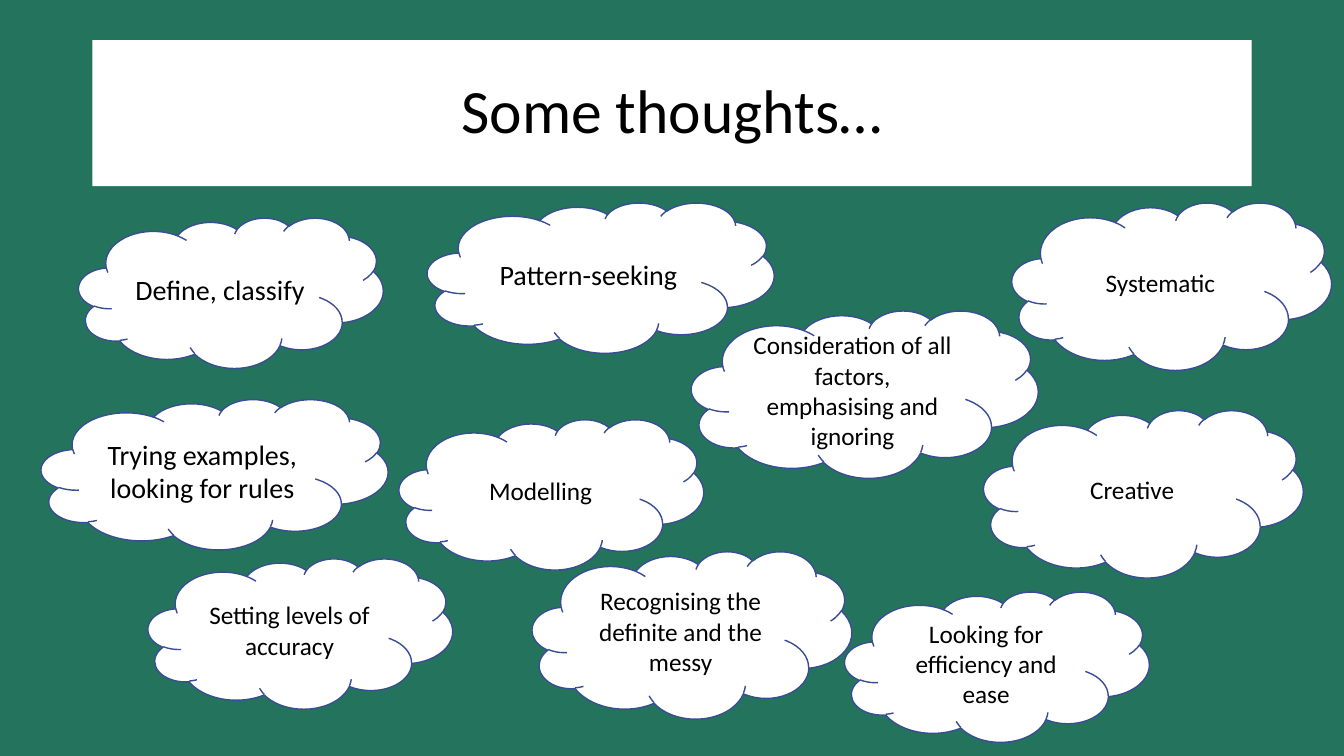
from dataclasses import dataclass

from pptx import Presentation
from pptx.dml.color import RGBColor
from pptx.enum.shapes import MSO_SHAPE
from pptx.enum.text import MSO_ANCHOR, MSO_AUTO_SIZE, PP_ALIGN
from pptx.util import Pt

CLOUD = MSO_SHAPE.CLOUD
MIDDLE = MSO_ANCHOR.MIDDLE
CENTER = PP_ALIGN.CENTER
NO_FIT = MSO_AUTO_SIZE.NONE


@dataclass(frozen=True)
class Theme:
    """Colours, font and type sizes of the slide."""
    background: RGBColor = RGBColor(0x23, 0x73, 0x5D)
    panel: RGBColor = RGBColor(0xFF, 0xFF, 0xFF)
    outline: RGBColor = RGBColor(0x3A, 0x4C, 0x94)
    ink: RGBColor = RGBColor(0, 0, 0)
    font: str = "Calibri"
    title: int = 44
    large: int = 20
    small: int = 18


THEME = Theme()
NARROW, MEDIUM, WIDE = 217.5, 228.2, 247.7
LOW, TALL = 107.3, 119.5

THOUGHTS = [
    ("Looking for efficiency and ease", THEME.small, (603.4, 422.6, NARROW, LOW)),
    ("Recognising the definite and the messy", THEME.small, (380.2, 393.8, MEDIUM, TALL)),
    ("Setting levels of accuracy", THEME.small, (105.8, 398.9, NARROW, LOW)),
    ("Creative", THEME.small, (702.7, 293, MEDIUM, TALL)),
    ("Consideration of all factors, emphasising and ignoring", THEME.small,
     (493.9, 221.8, WIDE, TALL)),
    ("Modelling", THEME.small, (285.1, 299.5, NARROW, LOW)),
    ("Trying examples, looking for rules", THEME.large, (29.5, 285.1, WIDE, LOW)),
    ("Systematic", THEME.small, (722.9, 144.7, MEDIUM, TALL)),
    ("Pattern-seeking", THEME.large, (305.3, 144.7, WIDE, LOW)),
    ("Define, classify", THEME.large, (56.2, 155.5, NARROW, LOW)),
]


def apply_format(target, values):
    """Set each attribute in values on target."""
    for attribute, value in values.items():
        setattr(target, attribute, value)


def fill_panel(panel, wording, size):
    """Give a shape the panel fill and centred wording."""
    panel.fill.solid()
    panel.fill.fore_color.rgb = THEME.panel
    frame = panel.text_frame
    frame.text = wording
    apply_format(frame, {"word_wrap": True, "auto_size": NO_FIT, "vertical_anchor": MIDDLE})
    paragraph = frame.paragraphs[0]
    paragraph.alignment = CENTER
    apply_format(paragraph.font, {"name": THEME.font, "size": Pt(size)})
    paragraph.font.color.rgb = THEME.ink
    return paragraph


def place_heading(slide, wording, box):
    """Place the title placeholder in box as a white banner."""
    heading = slide.shapes.title
    apply_format(heading, dict(zip(("left", "top", "width", "height"), map(Pt, box))))
    fill_panel(heading, wording, THEME.title).line_spacing = 0.9


def add_thought(slide, wording, size, box):
    """Add one thought as a cloud that fills box."""
    cloud = slide.shapes.add_shape(CLOUD, *map(Pt, box))
    cloud.shadow.inherit = False
    cloud.line.color.rgb = THEME.outline
    cloud.line.width = Pt(1)
    fill_panel(cloud, wording, size)


def build_thoughts_slide(deck):
    """Add the slide with its heading and clouds of thoughts."""
    slide = deck.slides.add_slide(deck.slide_layouts[5])
    slide.background.fill.solid()
    slide.background.fill.fore_color.rgb = THEME.background
    place_heading(slide, "Some thoughts…", (66, 28.6, 828, 104.4))
    for wording, size, box in THOUGHTS:
        add_thought(slide, wording, size, box)


def main():
    """Build and save the presentation."""
    deck = Presentation()
    apply_format(deck, {"slide_width": Pt(960), "slide_height": Pt(540)})
    build_thoughts_slide(deck)
    deck.save("out.pptx")


if __name__ == "__main__":
    main()
